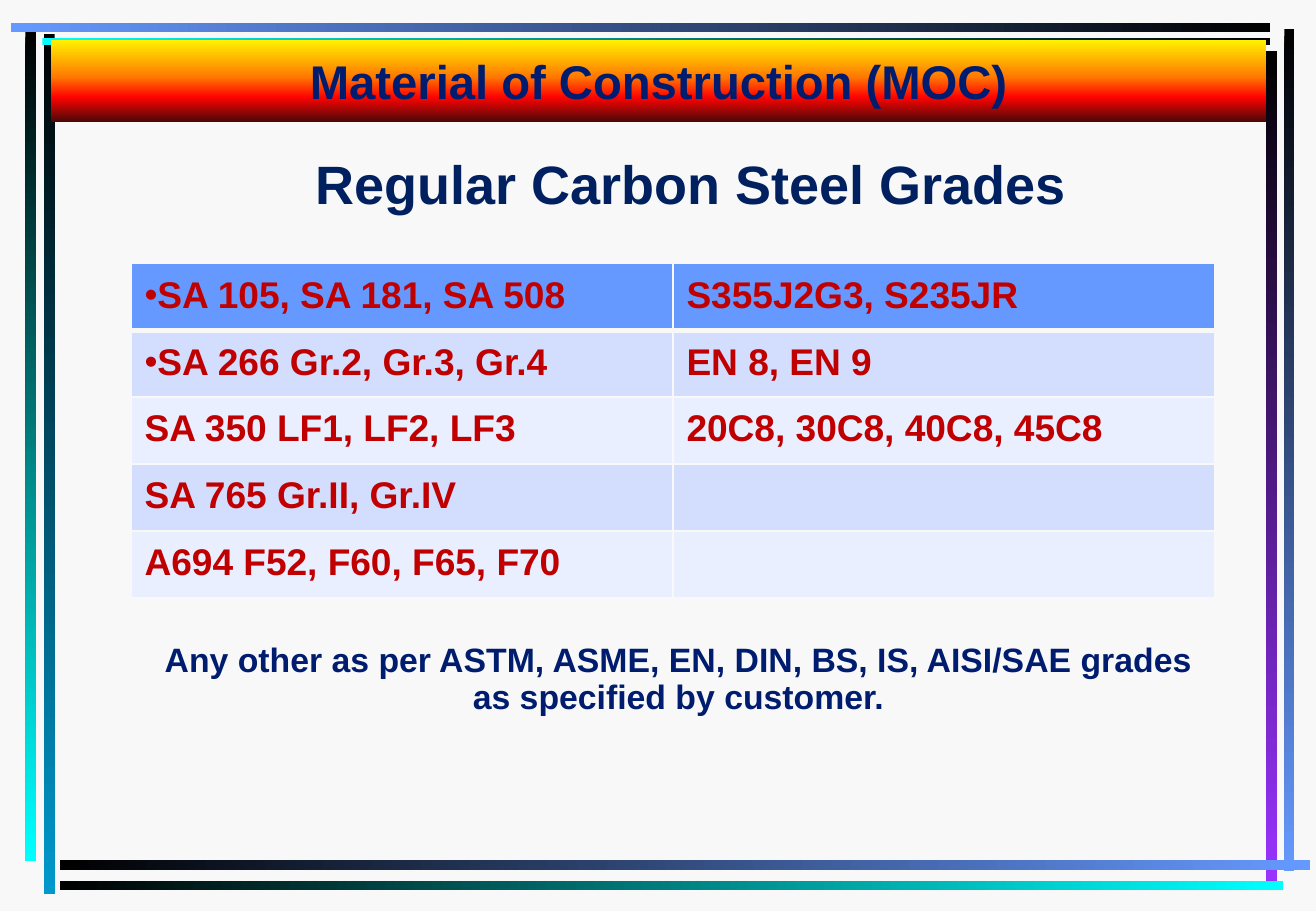
import pptx
import pptx.util
import pptx.oxml
import pptx.oxml.ns
import pptx.dml.color
import pptx.enum.text
import pptx.enum.shapes
from pptx.util import Inches

COLOURS = {
    "page": "F8F8F8", "black": "000000", "teal": "0099CC", "cyan": "00FFFF",
    "blue": "6699FF", "purple": "9933FF", "navy": "001C6E", "heading": "002060",
    "grade": "C00000", "band_dark": "D3DEFF", "band_light": "EAEFFF",
    "yellow": "FFF200", "orange": "FF7A00", "red": "FF0300", "maroon": "4D0808",
}
NAMESPACE = pptx.oxml.ns.nsdecls("a")
ACROSS, DOWN = 0, 90

FRAME_BARS = [
    (0.36, 0.28, 0.09, 7.08, "black", "teal", DOWN),
    (0.21, 0.25, 0.09, 6.84, "black", "cyan", DOWN),
    (10.57, 0.24, 0.08, 6.93, "black", "blue", DOWN),
    (10.42, 0.42, 0.09, 6.83, "black", "purple", DOWN),
    (0.49, 7.08, 10.29, 0.08, "black", "blue", ACROSS),
    (0.49, 7.25, 10.07, 0.08, "black", "cyan", ACROSS),
    (0.35, 0.31, 10.1, 0.06, "cyan", "black", ACROSS),
    (0.09, 0.19, 10.36, 0.07, "blue", "black", ACROSS),
]

GRADES = [
    ("SA 105, SA 181, SA 508", "S355J2G3, S235JR"),
    ("SA 266 Gr.2, Gr.3, Gr.4", "EN 8, EN 9"),
    ("SA 350 LF1, LF2, LF3", "20C8, 30C8, 40C8, 45C8"),
    ("SA 765 Gr.II, Gr.IV", ""),
    ("A694 F52, F60, F65, F70", ""),
]
BULLETED_ROWS = 2


def rgb(name):
    return pptx.dml.color.RGBColor.from_string(COLOURS[name])


class SlideBuilder:
    font_name = "Arial"

    def __init__(self, presentation):
        self.slide = presentation.slides.add_slide(presentation.slide_layouts[6])
        background = self.slide.background.fill
        background.solid()
        background.fore_color.rgb = rgb("page")

    def styled_run(self, paragraph, text, size, colour, centred=True, spacing=0.9):
        paragraph.line_spacing = spacing
        if centred:
            paragraph.alignment = pptx.enum.text.PP_ALIGN.CENTER
        run = paragraph.add_run()
        run.text = text
        run.font.name = self.font_name
        run.font.size = pptx.util.Pt(size)
        run.font.bold = True
        run.font.color.rgb = rgb(colour)

    def gradient_box(self, left, top, width, height, stops, angle):
        shape = self.slide.shapes.add_shape(
            pptx.enum.shapes.MSO_SHAPE.RECTANGLE,
            Inches(left), Inches(top), Inches(width), Inches(height))
        stop_xml = "".join(
            f'<a:gs pos="{position * 1000}"><a:srgbClr val="{COLOURS[colour]}"/></a:gs>'
            for position, colour in stops)
        shape._element.spPr.append(pptx.oxml.parse_xml(
            f'<a:gradFill {NAMESPACE} rotWithShape="1"><a:gsLst>{stop_xml}</a:gsLst>'
            f'<a:lin ang="{angle * 60000}" scaled="0"/></a:gradFill>'))
        shape.line.fill.background()
        shape.shadow.inherit = False
        return shape

    def title(self, text):
        stops = [(0, "yellow"), (45, "orange"), (70, "red"), (100, "maroon")]
        shape = self.gradient_box(0.42, 0.33, 10, 0.67, stops, DOWN)
        shape.text_frame.vertical_anchor = pptx.enum.text.MSO_ANCHOR.MIDDLE
        self.styled_run(shape.text_frame.paragraphs[0], text, 28, "navy", spacing=1.0)

    def text(self, left, top, width, height, text, size, colour):
        box = self.slide.shapes.add_textbox(
            Inches(left), Inches(top), Inches(width), Inches(height))
        box.text_frame.word_wrap = True
        self.styled_run(box.text_frame.paragraphs[0], text, size, colour)

    def border(self, cell, bottom_width):
        properties = cell._tc.get_or_add_tcPr()
        widths = {"lnL": 1, "lnR": 1, "lnT": 1, "lnB": bottom_width}
        for index, (side, width) in enumerate(widths.items()):
            properties.insert(index, pptx.oxml.parse_xml(
                f'<a:{side} {NAMESPACE} w="{pptx.util.Pt(width)}"><a:solidFill>'
                f'<a:srgbClr val="{COLOURS["page"]}"/></a:solidFill></a:{side}>'))

    def bullet(self, paragraph):
        properties = paragraph._p.get_or_add_pPr()
        properties.set("marL", "0")
        properties.set("indent", "0")
        for element in (
                f'<a:buClr {NAMESPACE}><a:srgbClr val="{COLOURS["grade"]}"/></a:buClr>',
                f'<a:buFont {NAMESPACE} typeface="{self.font_name}"/>',
                f'<a:buChar {NAMESPACE} char="•"/>'):
            properties.append(pptx.oxml.parse_xml(element))

    def table(self, left, top, column_width, row_height, rows):
        column_count = len(rows[0])
        table = self.slide.shapes.add_table(
            len(rows), column_count, Inches(left), Inches(top),
            Inches(column_width * column_count), Inches(row_height * len(rows))).table
        for column in table.columns:
            column.width = Inches(column_width)
        for row_index, texts in enumerate(rows):
            table.rows[row_index].height = Inches(row_height)
            band = "band_dark" if row_index % 2 else "band_light"
            for column_index, text in enumerate(texts):
                cell = table.cell(row_index, column_index)
                cell.fill.solid()
                cell.fill.fore_color.rgb = rgb(band if row_index else "blue")
                cell.vertical_anchor = pptx.enum.text.MSO_ANCHOR.MIDDLE
                cell.margin_left = cell.margin_right = Inches(0.11)
                cell.margin_top = cell.margin_bottom = 0
                self.border(cell, 1 if row_index else 3)
                if text:
                    paragraph = cell.text_frame.paragraphs[0]
                    if column_index == 0 and row_index < BULLETED_ROWS:
                        self.bullet(paragraph)
                    self.styled_run(paragraph, text, 22, "grade", centred=False)


def main():
    presentation = pptx.Presentation()
    presentation.slide_width = Inches(10.83)
    presentation.slide_height = Inches(7.5)
    builder = SlideBuilder(presentation)
    for left, top, width, height, start, end, angle in FRAME_BARS:
        builder.gradient_box(left, top, width, height, [(0, start), (100, end)], angle)
    builder.text(1.17, 5.25, 8.83, 0.75,
                 "Any other as per ASTM, ASME, EN, DIN, BS, IS, AISI/SAE grades "
                 "as specified by customer.", 20, "navy")
    builder.table(1.08, 2.17, 4.46, 0.55, GRADES)
    builder.text(1.72, 1.25, 7.94, 0.59, "Regular Carbon Steel Grades", 32, "heading")
    builder.title("Material of Construction (MOC)")
    presentation.save("out.pptx")


if __name__ == "__main__":
    main()
